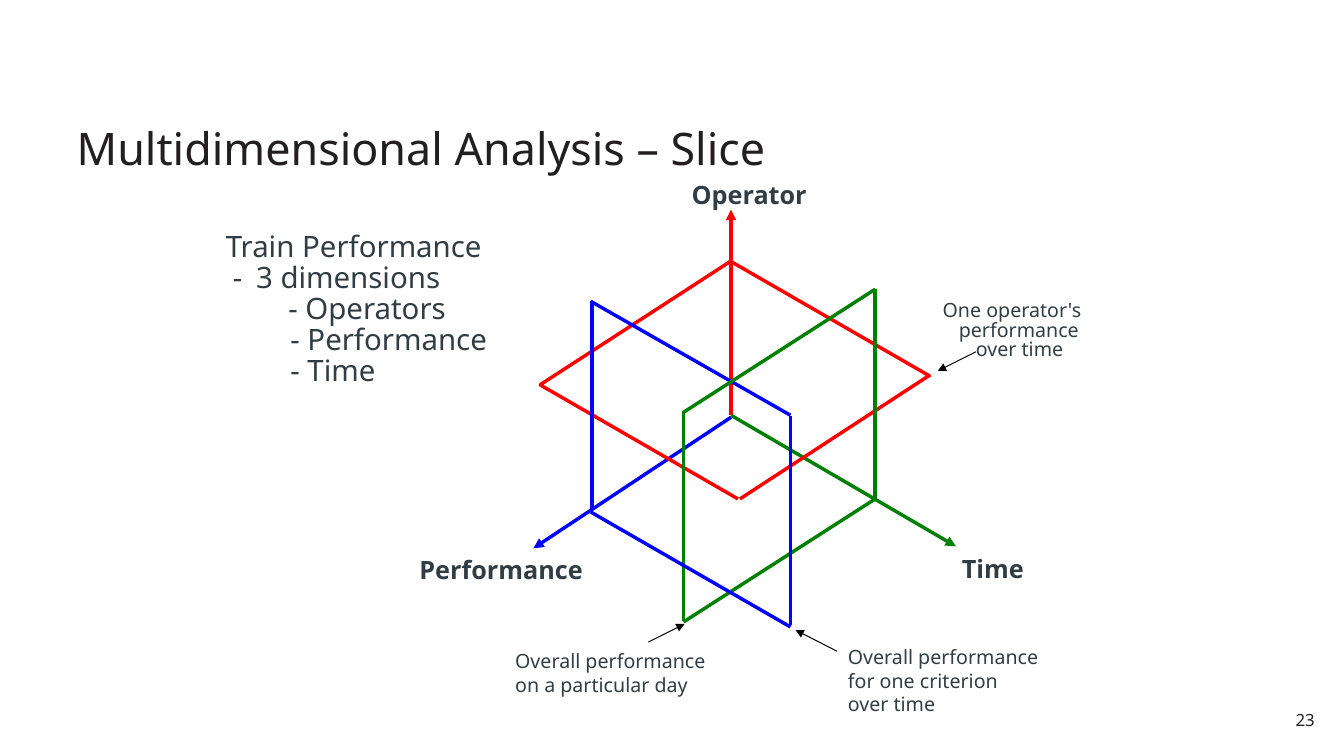
from lxml import etree
from pptx import Presentation
from pptx.dml.color import RGBColor
from pptx.enum.shapes import MSO_CONNECTOR
from pptx.enum.text import MSO_ANCHOR, PP_ALIGN
from pptx.oxml.ns import qn
from pptx.util import Pt

PX = 9144
RED = RGBColor(0xFF, 0x00, 0x00)
GREEN = RGBColor(0x00, 0x80, 0x00)
BLUE = RGBColor(0x00, 0x00, 0xFF)
BLACK = RGBColor(0x00, 0x00, 0x00)
INK = RGBColor(0x23, 0x1F, 0x20)
SLATE = RGBColor(0x32, 0x3D, 0x43)

prs = Presentation()
prs.slide_width, prs.slide_height = 1333 * PX, 750 * PX
slide = prs.slides.add_slide(prs.slide_layouts[5])
shapes = slide.shapes


def write(holder, box, lines, size, color=SLATE, bold=False, inset=(0, 0)):
    holder.left, holder.top, holder.width, holder.height = [v * PX for v in box]
    frame = holder.text_frame
    side, end = [v * PX for v in inset]
    frame_format = {"word_wrap": True, "vertical_anchor": MSO_ANCHOR.TOP,
                    "margin_left": side, "margin_right": side,
                    "margin_top": end, "margin_bottom": end}
    for name, value in frame_format.items():
        setattr(frame, name, value)
    frame.text = "\n".join(lines)
    for paragraph in frame.paragraphs:
        font_format = {"name": "Noto Sans", "size": Pt(size), "bold": bold}
        for run in paragraph.runs:
            for name, value in font_format.items():
                setattr(run.font, name, value)
            run.font.color.rgb = color
    return frame


def draw_line(start, end, color, width=2.48, arrow=False):
    edge = shapes.add_connector(MSO_CONNECTOR.STRAIGHT,
                                *[v * PX for v in (*start, *end)])
    edge.line.color.rgb = color
    edge.line.width = Pt(width)
    if arrow:
        etree.SubElement(edge.line._get_or_add_ln(), qn("a:tailEnd"), type="triangle")
    etree.SubElement(edge._element.spPr, qn("a:effectLst"))


title = write(shapes.title, (68, 76, 1197, 102), ["Multidimensional Analysis – Slice"],
              32, INK, inset=(8, 4))
title.vertical_anchor = MSO_ANCHOR.BOTTOM
title.paragraphs[0].alignment = PP_ALIGN.LEFT
title.paragraphs[0].line_spacing = 0.9

page_number = write(shapes.add_textbox(0, 0, PX, PX), (1265, 698, 47, 31), ["23"],
                    12, INK, inset=(8, 6))
page_number.paragraphs[0].alignment = PP_ALIGN.RIGHT

axes = [((725, 412), (725, 208), RED),
        ((725, 412), (948, 542), GREEN),
        ((725, 414), (529, 544), BLUE)]
for start, end, color in axes:
    draw_line(start, end, color, arrow=True)

operator_outline = [(734, 495), (921, 373), (922, 373), (726, 260),
                    (725, 259), (537, 381), (536, 382), (732, 495)]
builder = shapes.build_freeform(*operator_outline[0], scale=PX)
builder.add_line_segments(operator_outline[1:], close=False)
operator_slice = builder.convert_to_shape()
operator_slice.shadow.inherit = False
operator_slice.fill.background()
operator_slice.line.color.rgb = RED
operator_slice.line.width = Pt(2.48)

slice_edges = [((586, 299), (784, 412), BLUE),
               ((678, 408), (678, 616), GREEN),
               ((868, 287), (868, 494), GREEN),
               ((678, 409), (868, 287), GREEN),
               ((678, 617), (868, 495), GREEN),
               ((587, 299), (587, 506), BLUE),
               ((586, 508), (784, 622), BLUE),
               ((784, 413), (784, 620), BLUE)]
for start, end, color in slice_edges:
    draw_line(start, end, color)

axis_labels = [("Operator", (686, 178, 119, 22)),
               ("Performance", (416, 550, 177, 24)),
               ("Time", (954, 549, 106, 25))]
for label, box in axis_labels:
    write(shapes.add_textbox(0, 0, PX, PX), box, [label], 18, bold=True)

slice_notes = [(["One operator's"], (935, 296, 154, 16)),
               (["performance"], (951, 315, 122, 16)),
               (["over time"], (968, 334, 90, 16)),
               (["Overall performance", "on a particular day"], (511, 644, 226, 51)),
               (["Overall performance", "for one criterion", "over time"],
                (841, 640, 193, 79))]
for lines, box in slice_notes:
    write(shapes.add_textbox(0, 0, PX, PX), box, lines, 14)

note_pointers = [((830, 646), (789, 625)),
                 ((968, 349), (930, 368)),
                 ((643, 637), (679, 619))]
for start, end in note_pointers:
    draw_line(start, end, BLACK, 0.71, arrow=True)

dimensions = [("Train Performance", 0, 0),
              ("-\t3 dimensions", 30, -23),
              ("- Operators", 62, 0),
              ("- Performance", 64, 0),
              ("- Time", 64, 0)]
summary = write(shapes.add_textbox(0, 0, PX, PX), (224, 231, 290, 182),
                [text for text, margin, indent in dimensions], 21)
for paragraph, (text, margin, indent) in zip(summary.paragraphs, dimensions):
    paragraph.line_spacing = 0.88
    properties = paragraph._p.get_or_add_pPr()
    properties.set("marL", str(margin * PX))
    properties.set("indent", str(indent * PX))

prs.save("out.pptx")
